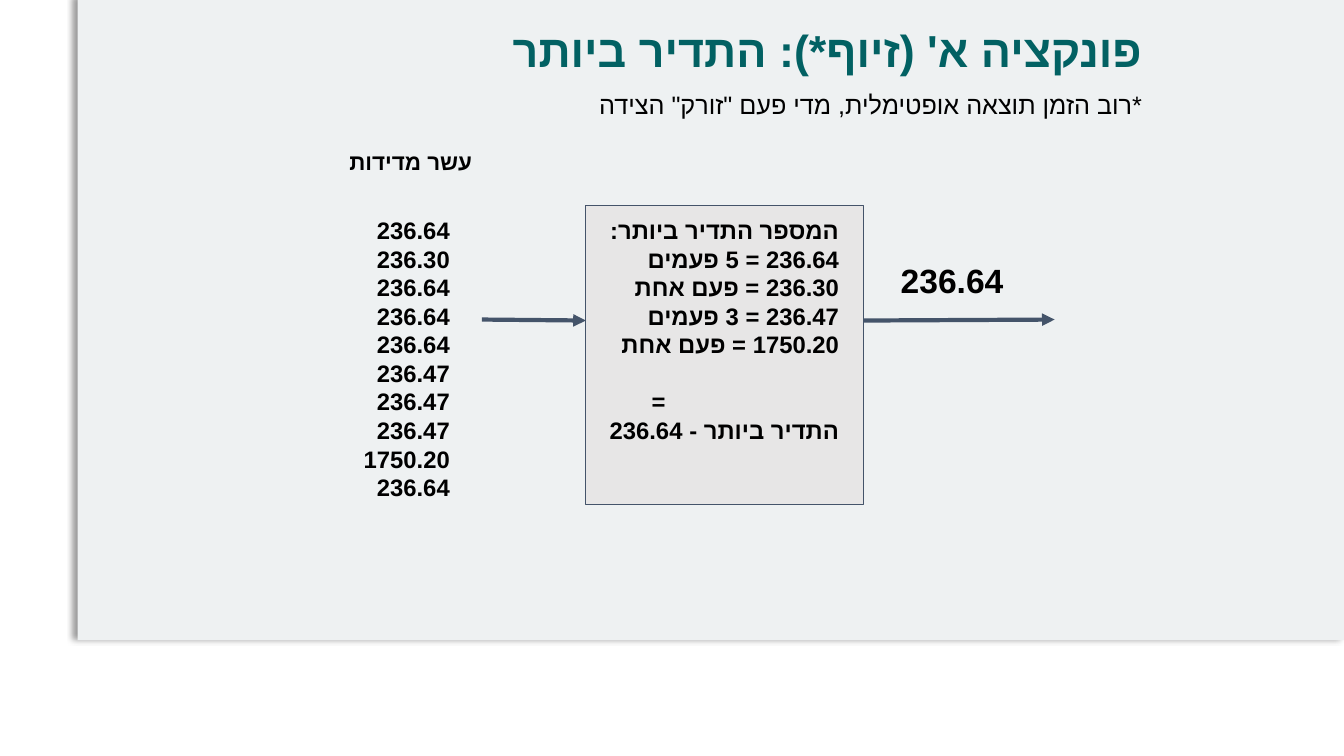
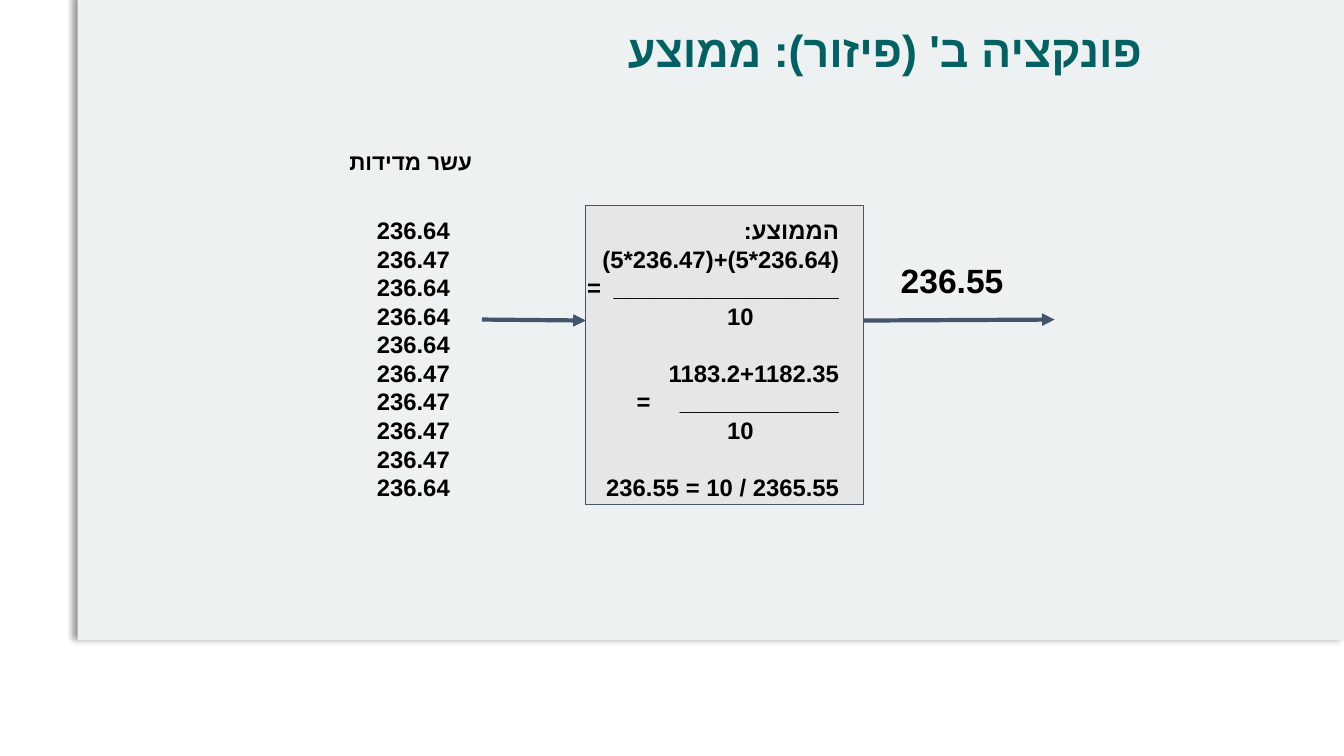
import dataclasses
import typing

import lxml.etree
import pptx
import pptx.dml.color
import pptx.enum.shapes
import pptx.enum.text
import pptx.oxml.ns
import pptx.util

RGBColor = pptx.dml.color.RGBColor
MIDDLE = pptx.enum.text.MSO_ANCHOR.MIDDLE
TOP = pptx.enum.text.MSO_ANCHOR.TOP
RIGHT = pptx.enum.text.PP_ALIGN.RIGHT

WIDTH = pptx.util.Inches(13.33)
HEIGHT = pptx.util.Inches(7.5)

PAGE_GREY = RGBColor(0xEE, 0xF1, 0xF2)
BOX_GREY = RGBColor(0xE7, 0xE6, 0xE6)
SLATE = RGBColor(0x44, 0x54, 0x6A)
TEAL = RGBColor(0x02, 0x61, 0x63)
BLACK = RGBColor(0, 0, 0)

LATIN_FONT = "Calibri"
HEBREW_FONT = "Arial"


class Place(typing.NamedTuple):
    """Left, top, width and height in percent of the slide."""
    left: float
    top: float
    width: float
    height: float


class Arrow(typing.NamedTuple):
    """Start and end in percent of the slide."""
    from_x: float
    from_y: float
    to_x: float
    to_y: float


@dataclasses.dataclass(frozen=True)
class Style:
    size: float
    bold: bool = True
    colour: RGBColor = BLACK
    anchor: pptx.enum.text.MSO_ANCHOR = TOP
    inset: float = 0.1
    spacing: float = 1.0


@dataclasses.dataclass(frozen=True)
class Line:
    """A paragraph; tabs are inches from the right edge, gap is points above."""
    text: str
    tabs: tuple[float, ...] = ()
    gap: float = 0


@dataclasses.dataclass(frozen=True)
class Method:
    title: str
    measurements: tuple[str, ...]
    working: tuple[Line, ...]
    result: str
    remark: str = ""


PAGE = Place(5.78, -0.4, 94.22, 85.07)
TITLE = Place(21.08, -1.07, 64.67, 16.13)
REMARK = Place(33.68, 10.53, 52.06, 6.67)
BOX = Place(43.59, 27.2, 20.63, 39.6)
WORKING = Place(42.54, 27.2, 20.63, 39.6)
MEASUREMENTS = Place(23.03, 27.2, 11.18, 52)
RESULT = Place(64.22, 33.07, 11.18, 13.47)
CAPTION = Place(24.68, 18.27, 11.18, 6.27)
ARROWS = (Arrow(35.86, 42.27, 43.59, 42.4), Arrow(64.22, 42.4, 78.47, 42.27))

TITLE_STYLE = Style(32, colour=TEAL, anchor=MIDDLE, inset=0.05, spacing=0.9)
REMARK_STYLE = Style(18, bold=False)
BODY_STYLE = Style(17)
RESULT_STYLE = Style(24)
CAPTION_STYLE = Style(16)

BLANK_LINE = 20.4
TEN_TAB = (1.11,)

METHODS = (
    Method(
        title="פונקציה א' (זיוף*): התדיר ביותר",
        remark="*רוב הזמן תוצאה אופטימלית, מדי פעם \"זורק\" הצידה",
        measurements=("236.64", "236.30", "236.64", "236.64", "236.64",
                      "236.47", "236.47", "236.47", "1750.20", "236.64"),
        working=(
            Line("המספר התדיר ביותר:"),
            Line("236.64 = 5 פעמים"),
            Line("236.30 = פעם אחת"),
            Line("236.47 = 3 פעמים"),
            Line("1750.20 = פעם אחת"),
            Line("\t=", (1.86,), BLANK_LINE),
            Line("התדיר ביותר - 236.64"),
        ),
        result="236.64",
    ),
    Method(
        title="פונקציה ב' (פיזור): ממוצע",
        measurements=("236.64", "236.47", "236.64", "236.64", "236.64",
                      "236.47", "236.47", "236.47", "236.47", "236.64"),
        working=(
            Line("הממוצע:"),
            Line("(236.64*5)+(236.47*5)"),
            Line("_________________\t=", (2.15,)),
            Line("\t10", TEN_TAB),
            Line("\t1183.2+1182.35", (0.27,), BLANK_LINE),
            Line("\t____________\t=", (0.27, 2.01)),
            Line("\t10", TEN_TAB),
            Line("2365.55 / 10 = 236.55", gap=BLANK_LINE),
        ),
        result="236.55",
    ),
)


def across(percent: float) -> int:
    return round(WIDTH * percent / 100)


def down(percent: float) -> int:
    return round(HEIGHT * percent / 100)


def extent(place: Place) -> tuple[int, int, int, int]:
    return (across(place.left), down(place.top),
            across(place.width), down(place.height))


def add_element(parent, tag: str, **attributes: object):
    element = lxml.etree.SubElement(parent, pptx.oxml.ns.qn(tag))
    for name, value in attributes.items():
        element.set(name, str(value))
    return element


def add_panel(page, place: Place, fill: RGBColor):
    panel = page.shapes.add_shape(
        pptx.enum.shapes.MSO_SHAPE.RECTANGLE, *extent(place))
    panel.shadow.inherit = False
    panel.fill.solid()
    panel.fill.fore_color.rgb = fill
    return panel


def add_page_panel(page) -> None:
    """Draw the grey page with a soft shadow on its left."""
    panel = add_panel(page, PAGE, PAGE_GREY)
    panel.line.fill.background()
    effects = panel._element.spPr.find(pptx.oxml.ns.qn("a:effectLst"))
    shadow = add_element(effects, "a:outerShdw", blurRad=pptx.util.Pt(4),
                         dist=pptx.util.Pt(3), dir=180 * 60000,
                         algn="r", rotWithShape=0)
    colour = add_element(shadow, "a:srgbClr", val=BLACK)
    add_element(colour, "a:alpha", val=40000)


def add_box(page) -> None:
    box = add_panel(page, BOX, BOX_GREY)
    box.line.color.rgb = SLATE
    box.line.width = pptx.util.Pt(0.75)


def add_text(page, place: Place, lines: typing.Sequence[Line],
             style: Style) -> None:
    """Write right-to-left paragraphs in a text box."""
    frame = page.shapes.add_textbox(*extent(place)).text_frame
    side, edge = pptx.util.Inches(0.1), pptx.util.Inches(style.inset)
    frame_format = {
        "word_wrap": True, "vertical_anchor": style.anchor,
        "margin_left": side, "margin_right": side,
        "margin_top": edge, "margin_bottom": edge,
    }
    for name, value in frame_format.items():
        setattr(frame, name, value)
    for index, line in enumerate(lines):
        para = frame.add_paragraph() if index else frame.paragraphs[0]
        add_line(para, line, style)


def add_line(para, line: Line, style: Style) -> None:
    properties = para._p.get_or_add_pPr()
    properties.set("rtl", "1")
    if line.tabs:
        stops = add_element(properties, "a:tabLst")
        for position in line.tabs:
            add_element(stops, "a:tab", pos=pptx.util.Inches(position), algn="l")
    para_format = {"alignment": RIGHT, "line_spacing": style.spacing,
                   "space_before": pptx.util.Pt(line.gap)}
    for name, value in para_format.items():
        setattr(para, name, value)
    span = para.add_run()
    span.text = line.text
    span_format = {"name": LATIN_FONT, "size": pptx.util.Pt(style.size),
                   "bold": style.bold}
    for name, value in span_format.items():
        setattr(span.font, name, value)
    span.font.color.rgb = style.colour
    add_element(span._r.get_or_add_rPr(), "a:cs", typeface=HEBREW_FONT)


def add_arrow(page, arrow: Arrow) -> None:
    connector = page.shapes.add_connector(
        pptx.enum.shapes.MSO_CONNECTOR.STRAIGHT,
        across(arrow.from_x), down(arrow.from_y),
        across(arrow.to_x), down(arrow.to_y))
    connector.line.color.rgb = SLATE
    connector.line.width = pptx.util.Pt(3)
    add_element(connector.line._get_or_add_ln(), "a:tailEnd", type="triangle")
    add_element(connector._element.spPr, "a:effectLst")


def add_method(deck, method: Method) -> None:
    """Add a slide that leads from measurements through a box to a result."""
    page = deck.slides.add_slide(deck.slide_layouts[6])
    add_page_panel(page)
    add_text(page, TITLE, [Line(method.title)], TITLE_STYLE)
    if method.remark:
        add_text(page, REMARK, [Line(method.remark)], REMARK_STYLE)
    add_box(page)
    add_text(page, WORKING, method.working, BODY_STYLE)
    for arrow in ARROWS:
        add_arrow(page, arrow)
    measurements = [Line(value) for value in method.measurements]
    add_text(page, MEASUREMENTS, measurements, BODY_STYLE)
    add_text(page, RESULT, [Line(method.result)], RESULT_STYLE)
    add_text(page, CAPTION, [Line("עשר מדידות")], CAPTION_STYLE)


def main() -> None:
    deck = pptx.Presentation()
    deck.slide_width, deck.slide_height = WIDTH, HEIGHT
    for method in METHODS:
        add_method(deck, method)
    deck.save("out.pptx")


if __name__ == "__main__":
    main()
